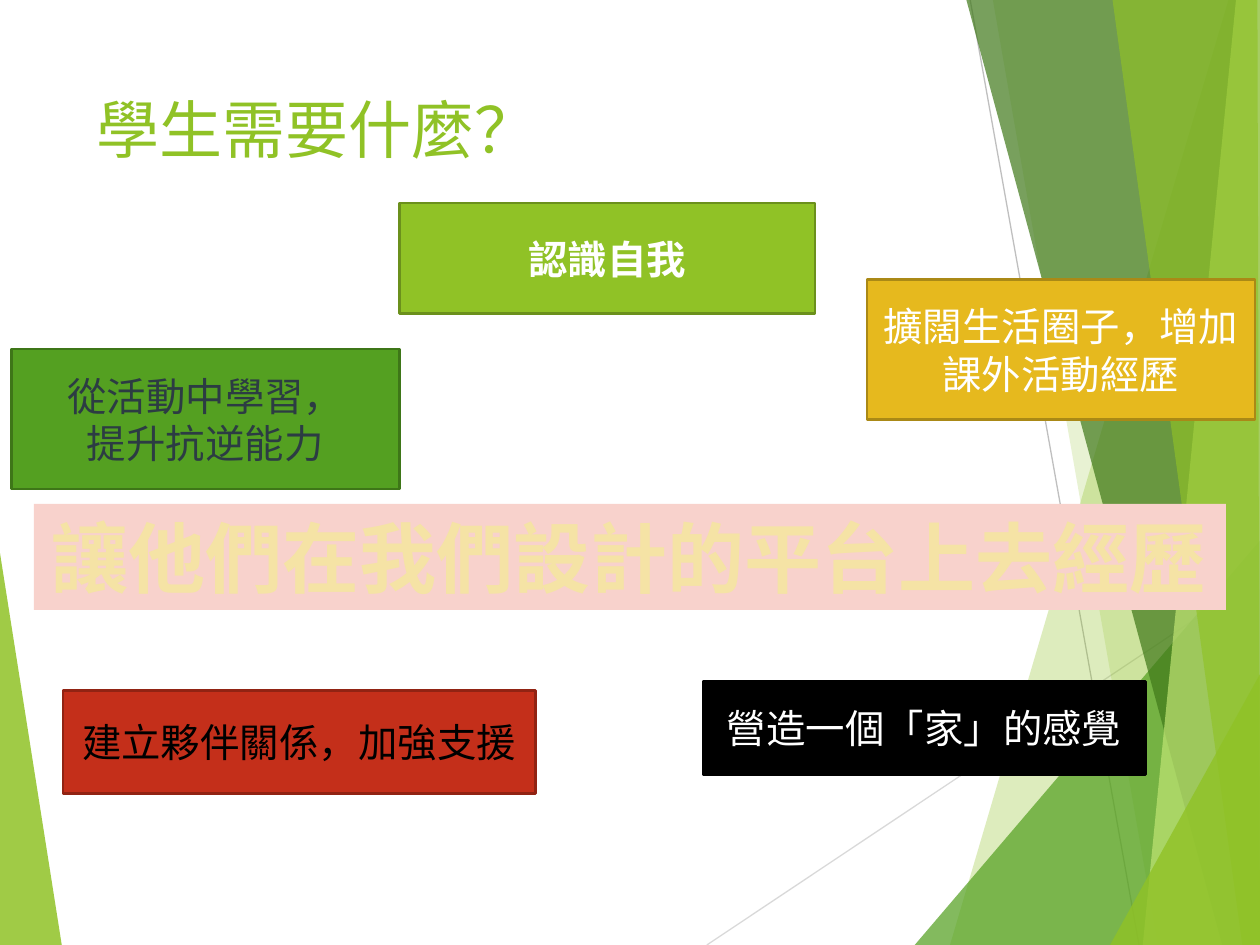
from lxml.etree import SubElement
from pptx import Presentation
from pptx.dml.color import RGBColor
from pptx.enum.shapes import MSO_CONNECTOR, MSO_SHAPE
from pptx.enum.text import MSO_ANCHOR, PP_ALIGN
from pptx.oxml import parse_xml
from pptx.oxml.ns import nsdecls, qn
from pptx.util import Inches, Pt

COLORS = {
    "lime": "90C226", "lime_edge": "6B901C", "pale_lime": "C0E474",
    "green": "54A021", "green_edge": "3E7618", "forest": "3F7819",
    "gold": "E6B91E", "gold_edge": "AA8916", "cream": "F5E3A5", "brown": "755E0D",
    "red": "C42F1A", "red_edge": "912313", "pink": "F8D2CC",
    "slate": "2C3C43", "black": "000000", "white": "FFFFFF",
    "light_gray": "D9D9D9", "gray": "BFBFBF",
}
BODY_FONT = "Noto Sans CJK TC"
BANNER_FONT = "Noto Sans CJK SC"

LEFT_FACET = ([(0, 4.39), (0.49, 7.5), (0, 7.5)], "lime", 85)
RIGHT_FACETS = [
    ([(9.75, 0), (7.54, 7.5), (10, 7.5), (10, 0)], "lime", 30),
    ([(7.88, 0), (9.19, 7.5), (10, 7.5), (10, 0)], "lime", 20),
    ([(7.26, 7.5), (10, 4.29), (10, 7.5)], "green", 72),
    ([(7.67, 0), (9.7, 7.5), (10, 7.5), (10, 0)], "forest", 70),
    ([(9.81, 0), (9.07, 7.5), (10, 7.5), (10, 0)], "pale_lime", 70),
    ([(8.83, 0), (9.86, 7.5), (10, 7.5), (9.98, 0)], "lime", 65),
    ([(8.81, 7.5), (10, 5.35), (10, 7.5)], "lime", 80),
]
RAYS = [((5.61, 7.5), (10, 4.57), "light_gray"), ((7.7, 0), (9.04, 7.5), "gray")]
NEEDS = [
    ((3.17, 1.61, 3.3, 0.88), "lime", "lime_edge", "white", True, ["認識自我"]),
    ((5.58, 5.41, 3.51, 0.74), "black", "black", "white", False, ["營造一個「家」的感覺"]),
    ((6.88, 2.22, 3.08, 1.11), "gold", "gold_edge", "white", False,
     ["擴闊生活圈子，增加課外活動經歷"]),
    ((0.09, 2.77, 3.08, 1.11), "green", "green_edge", "slate", False,
     ["從活動中學習，", "提升抗逆能力"]),
    ((0.5, 5.48, 3.75, 0.82), "red", "red_edge", "black", False,
     ["建立夥伴關係，加強支援"]),
]


def rgb(name):
    return RGBColor.from_string(COLORS[name])


def add_span(para, text, size, color, font=BODY_FONT, bold=False):
    span = para.add_run()
    span.text = text
    span.font.size = Pt(size)
    span.font.bold = bold
    span.font.name = font
    span.font.color.rgb = rgb(color)
    SubElement(span.font._element, qn("a:ea")).set("typeface", font)
    return span


def add_rectangle(page, box, fill, edge=None):
    shape = page.shapes.add_shape(MSO_SHAPE.RECTANGLE, *map(Inches, box))
    shape.shadow.inherit = False
    shape.fill.solid()
    shape.fill.fore_color.rgb = rgb(fill)
    if edge:
        shape.line.color.rgb = rgb(edge)
        shape.line.width = Pt(1.5)
    else:
        shape.line.fill.background()
    shape.text_frame.vertical_anchor = MSO_ANCHOR.MIDDLE
    return shape


def add_facet(page, points, color, opacity):
    corners = [(Inches(x), Inches(y)) for x, y in points]
    builder = page.shapes.build_freeform(*corners[0])
    builder.add_line_segments(corners[1:], close=True)
    facet = builder.convert_to_shape()
    facet.shadow.inherit = False
    facet.line.fill.background()
    facet.fill.solid()
    facet.fill.fore_color.rgb = rgb(color)
    tint = facet._element.spPr.find(qn("a:solidFill")).find(qn("a:srgbClr"))
    SubElement(tint, qn("a:alpha")).set("val", str(opacity * 1000))


def add_ray(page, start, end, color):
    ray = page.shapes.add_connector(MSO_CONNECTOR.STRAIGHT, *map(Inches, start + end))
    ray.line.color.rgb = rgb(color)
    ray.line.width = Pt(0.75)
    SubElement(ray._element.spPr, qn("a:effectLst"))


def add_backdrop(page):
    add_facet(page, *LEFT_FACET)
    for ray in RAYS:
        add_ray(page, *ray)
    for facet in RIGHT_FACETS:
        add_facet(page, *facet)


def add_title(page, box, text):
    title = page.shapes.add_textbox(*map(Inches, box))
    title.text_frame.word_wrap = True
    add_span(title.text_frame.paragraphs[0], text, 36, "lime")


def add_need(page, box, fill, edge, color, bold, lines):
    frame = add_rectangle(page, box, fill, edge).text_frame
    frame.word_wrap = True
    for index, line in enumerate(lines):
        para = frame.add_paragraph() if index else frame.paragraphs[0]
        para.alignment = PP_ALIGN.CENTER
        add_span(para, line, 22.5, color, bold=bold)


def add_banner(page, box, text):
    frame = add_rectangle(page, box, "pink").text_frame
    frame.word_wrap = False
    para = frame.paragraphs[0]
    para.alignment = PP_ALIGN.CENTER
    span = add_span(para, text, 44, "cream", BANNER_FONT, True)
    properties = span.font._element
    pattern = parse_xml(
        f'<a:pattFill {nsdecls("a")} prst="narHorz">'
        f'<a:fgClr><a:srgbClr val="{COLORS["gold"]}"/></a:fgClr>'
        f'<a:bgClr><a:srgbClr val="{COLORS["cream"]}"/></a:bgClr></a:pattFill>')
    outline = parse_xml(
        f'<a:ln {nsdecls("a")} w="12700"><a:solidFill>'
        f'<a:srgbClr val="{COLORS["brown"]}"/></a:solidFill></a:ln>')
    properties.replace(properties.find(qn("a:solidFill")), pattern)
    properties.insert(0, outline)


def main():
    deck = Presentation()
    deck.slide_width = Inches(10)
    deck.slide_height = Inches(7.5)
    page = deck.slides.add_slide(deck.slide_layouts[6])
    add_backdrop(page)
    add_title(page, (0.67, 0.67, 6.94, 1.44), "學生需要什麼？")
    for need in NEEDS:
        add_need(page, *need)
    add_banner(page, (0.27, 4, 9.46, 0.84), "讓他們在我們設計的平台上去經歷")
    deck.save("out.pptx")


if __name__ == "__main__":
    main()
